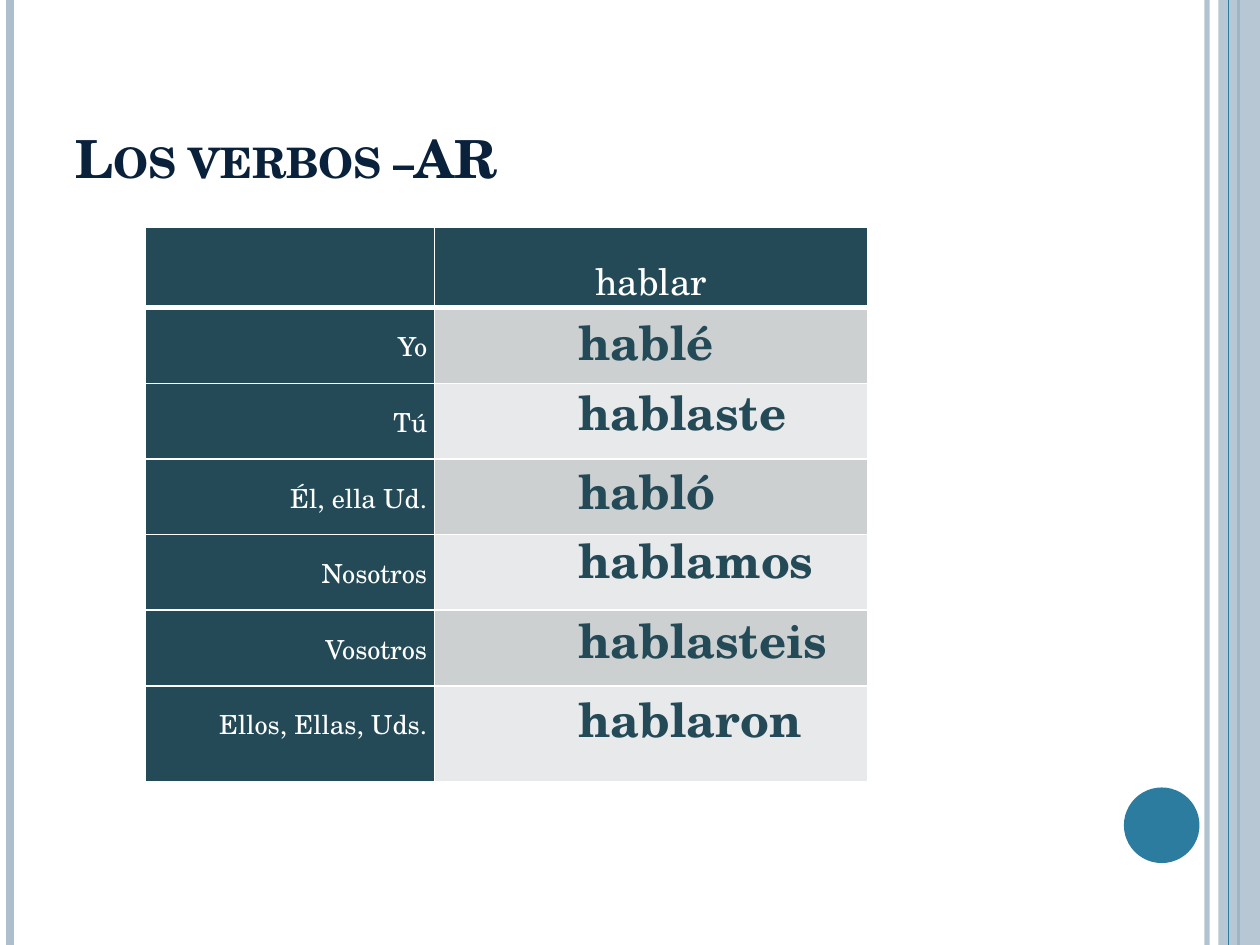
from dataclasses import dataclass

from lxml.etree import SubElement
from pptx import Presentation
from pptx.dml.color import RGBColor
from pptx.enum.shapes import MSO_CONNECTOR, MSO_SHAPE
from pptx.enum.text import MSO_ANCHOR, MSO_AUTO_SIZE, PP_ALIGN
from pptx.oxml.ns import qn
from pptx.util import Inches, Pt


@dataclass(frozen=True)
class Theme:
    font: str = "TeX Gyre Schola"
    navy: str = "09213B"
    slate: str = "244A58"
    teal: str = "2C7C9F"
    mist: str = "ADBFCD"
    white: str = "FFFFFF"
    bands: tuple = ("CDD0D1", "E8E9EA")
    title: float = 30
    verb: float = 27
    header: float = 21
    pronoun: float = 15


COLS, ROWS = 100, 75  # slide grid of 0.1 inch squares


def write(tf, text, *, font, size, color, bold=False, align=None,
          spacing=None, small_caps=False):
    p = tf.paragraphs[0]
    p.alignment, p.line_spacing = align, spacing
    r = p.add_run()
    r.text = text
    r.font.name, r.font.size, r.font.bold = font, Pt(size), bold
    r.font.color.rgb = RGBColor.from_string(color)
    if small_caps:
        r.font._element.set("cap", "small")


def set_alpha(element, percent):
    color = next(element.iter(qn("a:srgbClr")))
    SubElement(color, qn("a:alpha"), val=str(percent * 1000))


class SlideBuilder:
    def __init__(self, prs, theme):
        self.theme = theme
        self.unit_x, self.unit_y = prs.slide_width / COLS, prs.slide_height / ROWS
        self.s = prs.slides.add_slide(prs.slide_layouts[6])

    def box(self, x, y, w, h):
        return (round(x * self.unit_x), round(y * self.unit_y),
                round(w * self.unit_x), round(h * self.unit_y))

    def rule(self, x, color, width, alpha=None):
        """Vertical line over the full height of the slide."""
        left, top, _, height = self.box(x, 0, 0, ROWS)
        line = self.s.shapes.add_connector(
            MSO_CONNECTOR.STRAIGHT, left, top, left, height)
        line.line.color.rgb = RGBColor.from_string(color)
        line.line.width = Pt(width)
        if alpha:
            set_alpha(line._element.spPr, alpha)
        SubElement(line._element.spPr, qn("a:effectLst"))

    def shape(self, kind, area, color, alpha=None):
        sp = self.s.shapes.add_shape(kind, *self.box(*area))
        sp.shadow.inherit = False
        sp.fill.solid()
        sp.fill.fore_color.rgb = RGBColor.from_string(color)
        sp.line.fill.background()
        if alpha:
            set_alpha(sp._element.spPr, alpha)

    def text(self, area, text, anchor=MSO_ANCHOR.TOP, wrap=True, **style):
        tf = self.s.shapes.add_textbox(*self.box(*area)).text_frame
        tf.word_wrap, tf.vertical_anchor = wrap, anchor
        tf.auto_size = MSO_AUTO_SIZE.NONE if wrap else MSO_AUTO_SIZE.SHAPE_TO_FIT_TEXT
        write(tf, text, font=self.theme.font, **style)

    def cell(self, cell, fill, bottom, text="", **style):
        tc_pr = cell._tc.get_or_add_tcPr()
        for side, width in (("L", 1), ("R", 1), ("T", 1), ("B", bottom)):
            ln = SubElement(tc_pr, qn(f"a:ln{side}"), w=str(Pt(width)))
            paint = SubElement(ln, qn("a:solidFill"))
            SubElement(paint, qn("a:srgbClr"), val=self.theme.white)
        cell.fill.solid()
        cell.fill.fore_color.rgb = RGBColor.from_string(fill)
        if text:
            cell.margin_left = cell.margin_right = Inches(0.06)
            cell.margin_top = cell.margin_bottom = 0
            write(cell.text_frame, text, font=self.theme.font,
                  color=self.theme.white, spacing=1.5, **style)

    def conjugation_table(self, x, y, widths, heights, verb, pronouns):
        t = self.theme
        area = self.box(x, y, sum(widths), sum(heights))
        table = self.s.shapes.add_table(len(heights), len(widths), *area).table
        table.first_row = table.horz_banding = False
        for column, width in zip(table.columns, widths):
            column.width = round(width * self.unit_x)
        for row, height in zip(table.rows, heights):
            row.height = round(height * self.unit_y)
        self.cell(table.cell(0, 0), t.slate, 3)
        self.cell(table.cell(0, 1), t.slate, 3, verb,
                  size=t.header, align=PP_ALIGN.CENTER)
        for i, pronoun in enumerate(pronouns):
            self.cell(table.cell(i + 1, 0), t.slate, 1, pronoun,
                      size=t.pronoun, align=PP_ALIGN.RIGHT)
            self.cell(table.cell(i + 1, 1), t.bands[i % 2], 1)


def main():
    prs = Presentation()
    prs.slide_width, prs.slide_height = Inches(10), Inches(7.5)
    t = Theme()
    slide = SlideBuilder(prs, t)

    # Side rules, right band and disc
    slide.rule(95.8, t.mist, 3, alpha=93)
    slide.rule(0.8, t.mist, 4.5)
    slide.rule(98.3, t.teal, 1.5)
    slide.shape(MSO_SHAPE.RECTANGLE, (96.7, 0, 3.3, ROWS), t.mist, alpha=87)
    slide.rule(97.5, t.teal, 0.75)
    slide.shape(MSO_SHAPE.OVAL, (89.2, 62.5, 6, 6), t.teal)

    # Title
    slide.text((5, 3, 81.7, 12.5), "Los verbos –AR", anchor=MSO_ANCHOR.BOTTOM,
               size=t.title, color=t.navy, bold=True, small_caps=True)

    # Pronoun table
    slide.conjugation_table(
        11.5, 18, (23, 34.4), [6] * 6 + [7.6], "hablar",
        ("Yo", "Tú", "Él, ella Ud.", "Nosotros", "Vosotros", "Ellos, Ellas, Uds."))

    # Verb forms over the right column: text, top, width
    for form, top, width in (
            ("hablé", 24.4, 13.6), ("hablaste", 29.9, 19.2), ("habló", 36.2, 13.6),
            ("hablamos", 41.7, 21.8), ("hablasteis", 48, 21.8), ("hablaron", 54.3, 21.8)):
        slide.text((44.9, top, width, 5.6), form, wrap=False,
                   size=t.verb, color=t.slate, bold=True, align=PP_ALIGN.LEFT)

    prs.save("out.pptx")


if __name__ == "__main__":
    main()
